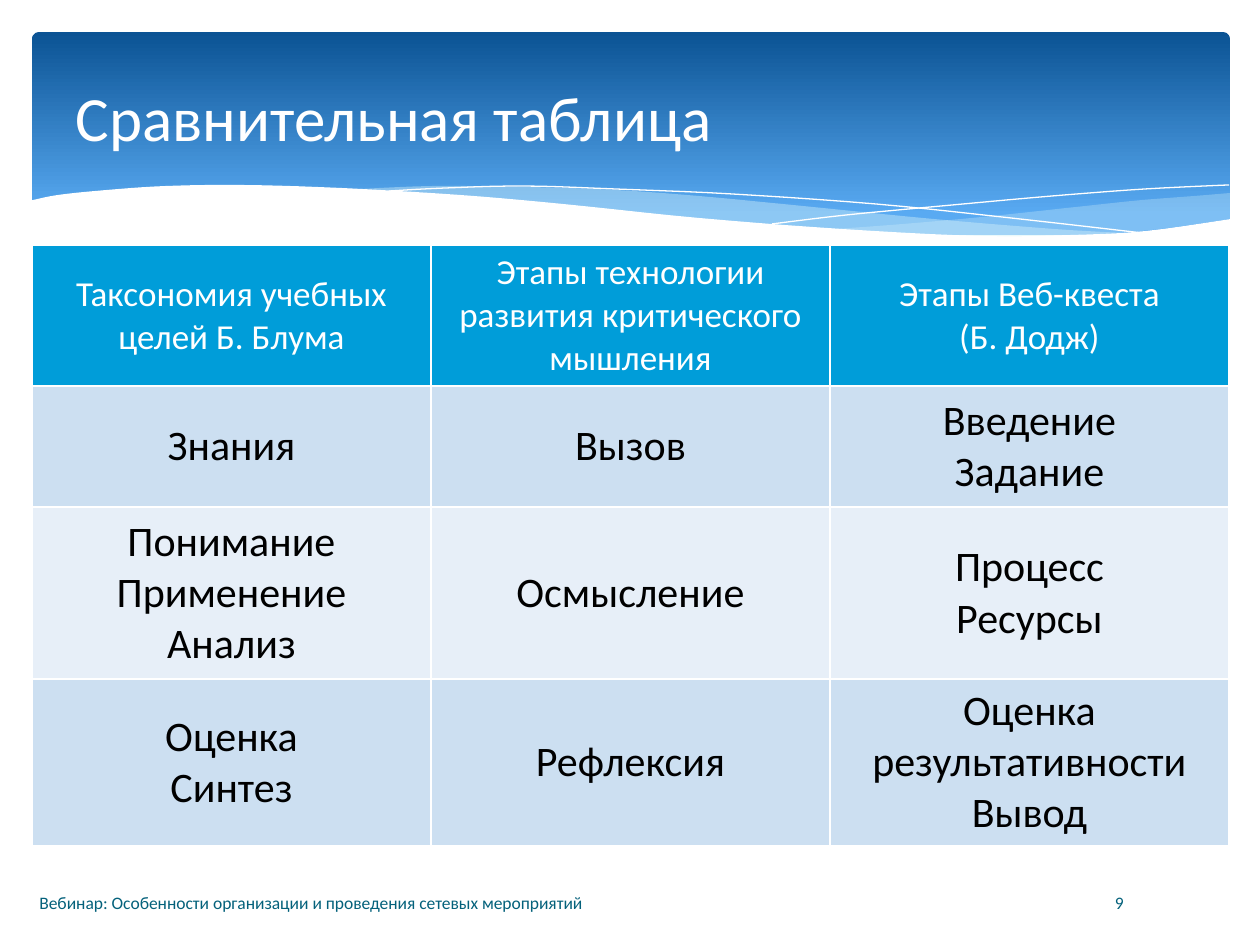
from lxml.etree import SubElement
from pptx import Presentation
from pptx.dml.color import RGBColor
from pptx.enum.shapes import MSO_SHAPE
from pptx.enum.text import MSO_ANCHOR, PP_ALIGN
from pptx.oxml.ns import qn
from pptx.util import Emu, Pt

EMU_PER_PX = 914400 / 126
FONT = "Calibri"
COLORS = {
    "white": "FFFFFF",
    "black": "000000",
    "banner_top": "0B5394",
    "banner_bottom": "59AAF2",
    "wave": "DBF5F9",
    "header": "009DD9",
    "band_dark": "CCDFF1",
    "band_light": "E7EFF8",
    "footer": "04617B",
}

RIGHT_WAVE_TOP = [(1230, 193), (1194, 196), (1142, 200), (1085, 206), (982, 217), (890, 225), (833, 229)]
RIGHT_WAVE_BOTTOM = [(833, 229), (922, 234), (1012, 236), (1099, 234), (1160, 229), (1230, 219)]
LONG_WAVE_TOP = [(1125, 233), (1055, 229), (934, 219), (793, 205), (699, 196), (616, 190),
                 (529, 187), (433, 186), (360, 189)]
LONG_WAVE_BOTTOM = [(360, 189), (456, 195), (566, 205), (713, 220), (838, 230), (943, 235),
                    (1043, 237), (1125, 233)]
FALLING_LINE = [(389, 191), (445, 188), (524, 186), (616, 189), (733, 194), (876, 204),
                (1002, 217), (1143, 233)]
RISING_LINE = [(772, 224), (847, 215), (942, 206), (1053, 196), (1146, 189), (1229, 185)]
WHITE_EDGE = [(29, 201), (58, 195), (107, 190), (166, 186), (243, 185), (341, 188), (460, 195),
              (563, 204), (699, 218), (842, 229), (980, 236), (1071, 235), (1146, 231), (1231, 219)]

COLUMN_WIDTH = 399
ROW_HEIGHTS = [140, 121, 172, 166]
ROWS = [
    ["Таксономия учебных целей Б. Блума", "Этапы технологии развития критического мышления",
     "Этапы Веб-квеста\v(Б. Додж)"],
    ["Знания", "Вызов", "Введение\nЗадание"],
    ["Понимание\nПрименение\nАнализ", "Осмысление", "Процесс\nРесурсы"],
    ["Оценка\nСинтез", "Рефлексия", "Оценка результативности\nВывод"],
]


def px(value):
    """Turn pixels into EMU."""
    return Emu(round(value * EMU_PER_PX))


def color(name):
    """Look up a named colour."""
    return RGBColor.from_string(COLORS[name])


def format_text(text_frame, size, color_name, alignment, anchor):
    """Apply one style to every paragraph of a text frame."""
    text_frame.word_wrap = True
    text_frame.vertical_anchor = anchor
    for paragraph in text_frame.paragraphs:
        paragraph.alignment = alignment
        paragraph.font.name = FONT
        paragraph.font.size = Pt(size)
        paragraph.font.bold = False
        paragraph.font.color.rgb = color(color_name)


def smooth_curve(points, steps=5):
    """Interpolate a Catmull-Rom curve through the points."""
    padded = [points[0], *points, points[-1]]
    curve = [points[0]]
    for before, start, end, after in zip(padded, padded[1:], padded[2:], padded[3:]):
        for step in range(1, steps + 1):
            t = step / steps
            curve.append(tuple(
                b + ((c - a) * t + (2 * a - 5 * b + 4 * c - d) * t**2
                     + (3 * b - a - 3 * c + d) * t**3) / 2
                for a, b, c, d in zip(before, start, end, after)))
    return curve


def add_outline(slide, points, closed):
    """Draw a freeform through pixel points."""
    corners = [(px(x), px(y)) for x, y in points]
    builder = slide.shapes.build_freeform(*corners[0])
    builder.add_line_segments(corners[1:], close=closed)
    shape = builder.convert_to_shape()
    shape.shadow.inherit = False
    return shape


def add_wave(slide, points, color_name, opacity=100):
    """Draw a filled area without an outline."""
    shape = add_outline(slide, points, True)
    shape.fill.solid()
    shape.fill.fore_color.rgb = color(color_name)
    shape.line.fill.background()
    if opacity < 100:
        fill_color = shape._element.spPr.find(qn("a:solidFill"))[0]
        SubElement(fill_color, qn("a:alpha"), val=str(opacity * 1000))


def add_hairline(slide, points):
    """Draw a thin white curve."""
    shape = add_outline(slide, smooth_curve(points), False)
    shape.fill.background()
    shape.line.color.rgb = color("white")
    shape.line.width = Pt(0)


def add_banner(slide):
    """Draw the gradient banner and its waves."""
    banner = slide.shapes.add_shape(MSO_SHAPE.ROUNDED_RECTANGLE, px(32), px(32), px(1198), px(203))
    banner.adjustments[0] = 0.034
    banner.shadow.inherit = False
    banner.line.fill.background()
    banner.fill.gradient()
    banner.fill.gradient_angle = 270
    stops = zip(banner.fill.gradient_stops, (0, 0.9), ("banner_top", "banner_bottom"))
    for stop, position, color_name in stops:
        stop.position = position
        stop.color.rgb = color(color_name)
    add_wave(slide, smooth_curve(RIGHT_WAVE_TOP) + smooth_curve(RIGHT_WAVE_BOTTOM), "wave", 29)
    add_wave(slide, smooth_curve(LONG_WAVE_TOP) + smooth_curve(LONG_WAVE_BOTTOM), "wave", 40)
    add_hairline(slide, FALLING_LINE)
    add_hairline(slide, RISING_LINE)
    add_wave(slide, smooth_curve(WHITE_EDGE) + [(1231, 265), (29, 265)], "white")


def add_borders(cell):
    """Give a cell thin white borders."""
    properties = cell._tc.get_or_add_tcPr()
    for side in ("lnL", "lnR", "lnT", "lnB"):
        line = SubElement(properties, qn(f"a:{side}"), w=str(Pt(1)))
        fill = SubElement(line, qn("a:solidFill"))
        SubElement(fill, qn("a:srgbClr"), val=COLORS["white"])


def add_comparison_table(slide):
    """Add the comparison table."""
    frame = slide.shapes.add_table(len(ROWS), len(ROWS[0]), px(32), px(245),
                                   px(COLUMN_WIDTH * len(ROWS[0])), px(sum(ROW_HEIGHTS)))
    table = frame.table
    for column in table.columns:
        column.width = px(COLUMN_WIDTH)
    for row_index, (texts, height) in enumerate(zip(ROWS, ROW_HEIGHTS)):
        table.rows[row_index].height = px(height)
        is_header = row_index == 0
        band = "header" if is_header else ("band_light", "band_dark")[row_index % 2]
        for column_index, text in enumerate(texts):
            cell = table.cell(row_index, column_index)
            add_borders(cell)
            cell.fill.solid()
            cell.fill.fore_color.rgb = color(band)
            cell.text = text
            cell.vertical_anchor = MSO_ANCHOR.MIDDLE
            format_text(cell.text_frame, 20 if is_header else 24,
                        "white" if is_header else "black", PP_ALIGN.CENTER, MSO_ANCHOR.MIDDLE)


def add_footer(slide, left, width, text, alignment):
    """Add a small text at the foot of the slide."""
    box = slide.shapes.add_textbox(px(left), px(869), px(width), px(50))
    box.text_frame.text = text
    format_text(box.text_frame, 10, "footer", alignment, MSO_ANCHOR.BOTTOM)


def place_title(slide, text):
    """Fill the title placeholder and bring it in front of the banner."""
    title = slide.shapes.title
    title.left, title.top, title.width, title.height = px(63), px(47), px(1134), px(139)
    title.text_frame.text = text
    format_text(title.text_frame, 36, "white", PP_ALIGN.LEFT, MSO_ANCHOR.MIDDLE)
    slide.shapes._spTree.append(title._element)


def main():
    """Build and save the slide."""
    presentation = Presentation()
    presentation.slide_width, presentation.slide_height = px(1260), px(945)
    slide = presentation.slides.add_slide(presentation.slide_layouts[5])
    add_banner(slide)
    add_comparison_table(slide)
    add_footer(slide, 27, 1000, "Вебинар: Особенности организации и проведения сетевых мероприятий",
               PP_ALIGN.LEFT)
    add_footer(slide, 1036, 100, "9", PP_ALIGN.RIGHT)
    place_title(slide, "Сравнительная таблица")
    presentation.save("out.pptx")


if __name__ == "__main__":
    main()
